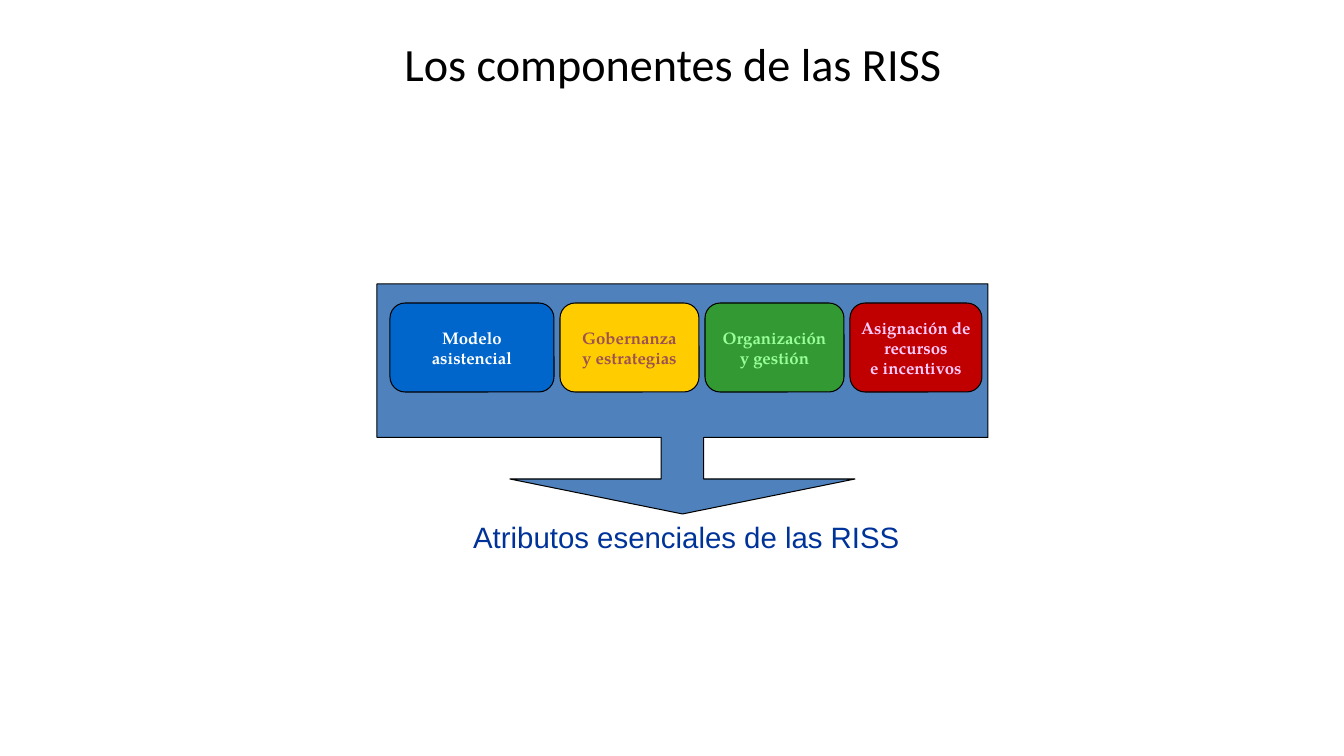
import pptx
import pptx.dml.color
import pptx.enum.shapes
import pptx.enum.text
import pptx.util

EMU_PER_PX = 914400 / 100.8
SHAPE = pptx.enum.shapes.MSO_SHAPE
ANCHOR = pptx.enum.text.MSO_ANCHOR

COMPONENTS = [
    (164, "0066CC", "FFFFFF", ["Modelo", "asistencial"]),
    (139, "FFCC00", "9C5252", ["Gobernanza", "y estrategias"]),
    (139, "339933", "99FF99", ["Organización", "y gestión"]),
    (132, "C00000", "FFCCFF", ["Asignación de", "recursos", "e incentivos"]),
]
CARD_LEFT, CARD_TOP, CARD_HEIGHT, CARD_GAP = 390, 303, 89, 6


def px(n):
    return pptx.util.Emu(round(n * EMU_PER_PX))


def rgb(value):
    return pptx.dml.color.RGBColor.from_string(value)


def write(sp, lines, font, size, color, bold=False, anchor=ANCHOR.MIDDLE, wrap=False):
    """Put one centred paragraph per line into a shape."""
    tf = sp.text_frame
    tf.auto_size = pptx.enum.text.MSO_AUTO_SIZE.NONE
    tf.word_wrap = wrap
    tf.vertical_anchor = anchor
    for i, line in enumerate(lines):
        p = tf.add_paragraph() if i else tf.paragraphs[0]
        p.alignment = pptx.enum.text.PP_ALIGN.CENTER
        r = p.add_run()
        r.text = line
        r.font.name = font
        r.font.size = pptx.util.Pt(size)
        r.font.bold = bold
        r.font.color.rgb = rgb(color)


def add_title(s, text):
    sp = s.shapes.title
    sp.left, sp.top, sp.width, sp.height = px(68), px(24), px(1210), px(126)
    write(sp, [text], "Calibri", 33, "000000", anchor=ANCHOR.TOP, wrap=True)
    sp.text_frame.margin_top = px(11)


def add_outlined(s, kind, left, top, width, height, fill, adjustments):
    sp = s.shapes.add_shape(kind, px(left), px(top), px(width), px(height))
    for i, value in enumerate(adjustments):
        sp.adjustments[i] = value
    sp.shadow.inherit = False
    sp.fill.solid()
    sp.fill.fore_color.rgb = rgb(fill)
    sp.line.color.rgb = rgb("000000")
    sp.line.width = pptx.util.Pt(0.75)
    return sp


def add_components(s):
    left = CARD_LEFT
    for width, fill, color, lines in COMPONENTS:
        sp = add_outlined(s, SHAPE.ROUNDED_RECTANGLE, left, CARD_TOP, width,
                          CARD_HEIGHT, fill, [0.17])
        write(sp, lines, "TeX Gyre Pagella", 12, color, bold=True)
        left += width + CARD_GAP


def add_caption(s, text):
    sp = s.shapes.add_textbox(px(461), px(514), px(451), px(45))
    write(sp, [text], "Arial", 21, "003399", anchor=ANCHOR.TOP)


def main():
    prs = pptx.Presentation()
    prs.slide_width, prs.slide_height = px(1344), px(756)
    s = prs.slides.add_slide(prs.slide_layouts.get_by_name("Title Only"))
    add_title(s, "Los componentes de las RISS")
    add_outlined(s, SHAPE.DOWN_ARROW_CALLOUT, 377, 284, 611, 230, "4F81BD",
                 [0.185, 0.75, 0.152, 0.667])
    add_components(s)
    add_caption(s, "Atributos esenciales de las RISS")
    prs.save("out.pptx")


if __name__ == "__main__":
    main()
